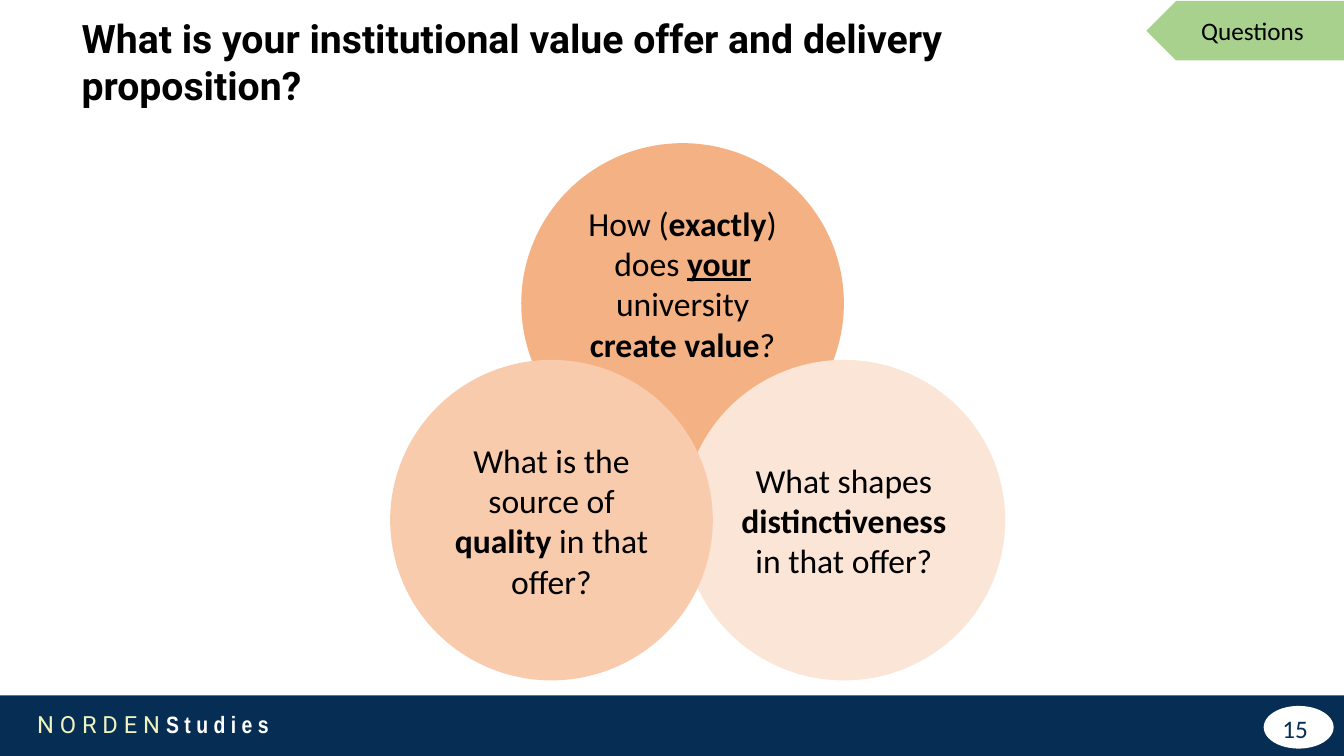
"""Build the value proposition slide with three overlapping question circles."""
from pptx import Presentation
from pptx.dml.color import RGBColor
from pptx.enum import shapes, text
from pptx.util import Inches, Pt

NAVY, WHITE, BLACK = "062D53", "FFFFFF", "000000"
KIND = shapes.MSO_SHAPE
ALIGN = text.PP_ALIGN

deck = Presentation()
deck.slide_width, deck.slide_height = Inches(13.33), Inches(7.5)
page = deck.slides.add_slide(deck.slide_layouts[6])


def add_box(place, kind=None, fill=None):
    """Add a filled shape, or a plain text box when no kind is given."""
    place = [Inches(length) for length in place]
    if kind is None:
        box = page.shapes.add_textbox(*place)
    else:
        box = page.shapes.add_shape(kind, *place)
        box.shadow.inherit = False
        box.fill.solid()
        box.fill.fore_color.rgb = RGBColor.from_string(fill)
        box.line.fill.background()
        box.text_frame.vertical_anchor = text.MSO_ANCHOR.MIDDLE
    box.text_frame.word_wrap = True
    return box


def write(box, runs, size, align=ALIGN.CENTER, font="Calibri", color=BLACK):
    """Add runs of (wording, style), where style holds b for bold and u for underline."""
    para = box.text_frame.paragraphs[0]
    para.alignment = align
    for wording, style in runs:
        span = para.add_run()
        span.text = wording
        span.font.name = font
        span.font.size = Pt(size)
        span.font.bold = "b" in style
        span.font.underline = "u" in style
        span.font.color.rgb = RGBColor.from_string(color)


add_box((0, 6.9, 13.33, 0.6), KIND.RECTANGLE, NAVY)

footer = add_box((0.27, 6.99, 2.58, 0.4))
write(footer, [("N O R D E N ", "")], 16.9, ALIGN.LEFT, "Roboto", "F0F3BD")
write(footer, [("S t u d i e s", "b")], 16.9, ALIGN.LEFT, "Arial Narrow", WHITE)

badge = add_box((12.54, 7.01, 0.68, 0.41), KIND.OVAL, WHITE)
badge.line.color.rgb = RGBColor.from_string(WHITE)
badge.line.width = Pt(1)
number = add_box((10.07, 7.03, 3, 0.4))
write(number, [("15", "")], 18, ALIGN.RIGHT, color=NAVY)

title = add_box((0, 0.09, 11, 1.04))
title.text_frame.margin_left = Inches(0.81)
write(title, [("What is your institutional value offer and delivery proposition?", "b")],
      28, ALIGN.LEFT, "Roboto")

tag = add_box((11.37, 0.01, 1.96, 0.59), KIND.PENTAGON, "A9D18E")
tag.element.spPr.xfrm.set("flipH", "1")
write(tag, [("Questions", "")], 18)

circles = [
    (5.17, 1.42, "F4B183", 0.45,
     [("How (", ""), ("exactly", "b"), (") does ", ""), ("your", "bu"),
      (" university ", ""), ("create value", "b"), ("?", "")]),
    (6.77, 3.57, "FBE5D6", 0.05,
     [("What shapes ", ""), ("distinctiveness", "b"), (" in that offer?", "")]),
    (3.87, 3.57, "F8CBAD", 0.05,
     [("What is the source of ", ""), ("quality", "b"), (" in that offer?", "")]),
]
for left, top, fill, bottom_margin, question in circles:
    circle = add_box((left, top, 3.2, 3.18), KIND.OVAL, fill)
    circle.text_frame.margin_bottom = Inches(bottom_margin)
    write(circle, question, 24)

deck.save("out.pptx")
